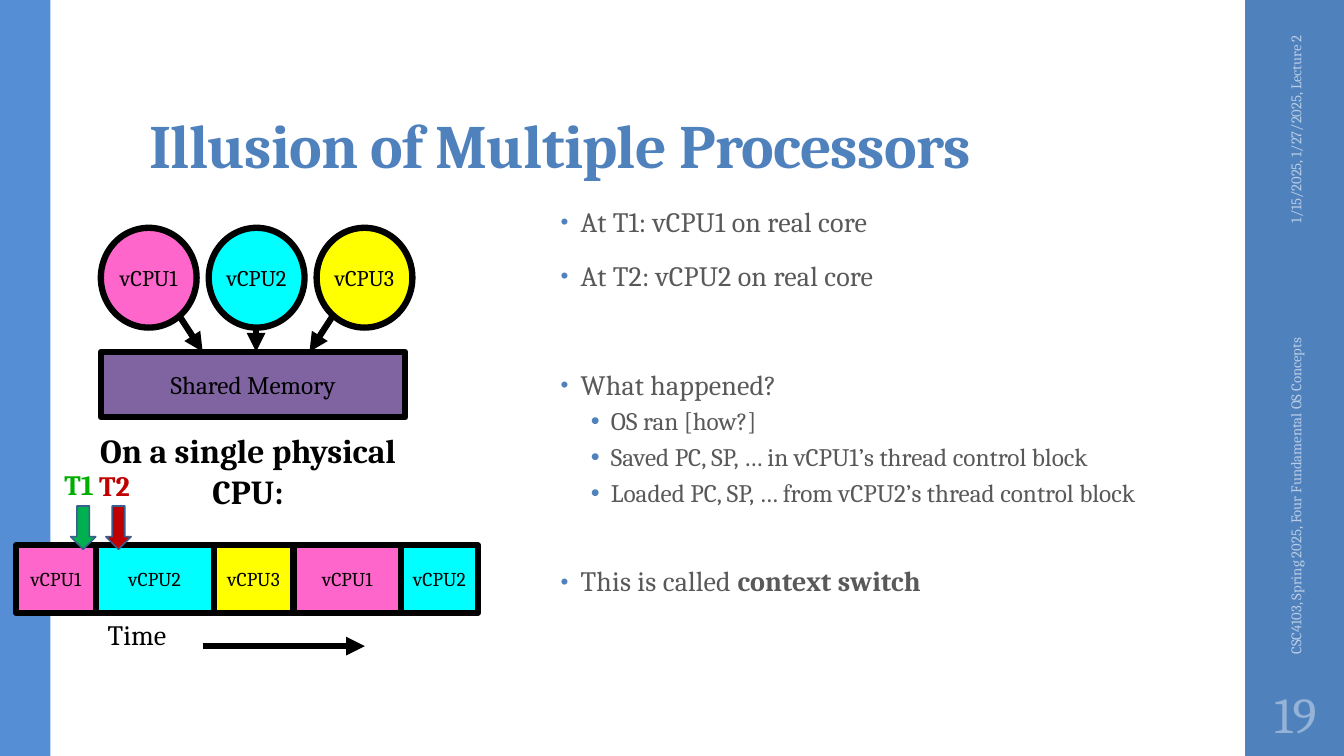
"""Build the slide on the illusion of multiple processors."""
from dataclasses import dataclass
from itertools import accumulate
from typing import Optional

from lxml import etree
from pptx import Presentation
from pptx import util as u
from pptx.dml.color import RGBColor
from pptx.enum import shapes, text
from pptx.oxml import ns

SCALE = 9144
FACE = "Cambria"
HUE = {
    "blue": "4F81BD", "sky": "558ED5", "pale": "B9CDE5", "mist": "95B3D7",
    "gray": "595959", "black": "000000", "edge": "3A5F8C", "pink": "FF66CC",
    "cyan": "00FFFF", "yellow": "FFFF00", "purple": "8064A2",
    "green": "00B050", "lime": "00AE00", "red": "C00000",
}
KIND = shapes.MSO_SHAPE
SIDE = text.PP_ALIGN
ROOT = text.MSO_ANCHOR
CPUS = {"vCPU1": "pink", "vCPU2": "cyan", "vCPU3": "yellow"}


@dataclass
class Box:
    kind: int
    at: tuple[int, int, int, int]
    fill: str
    edge: Optional[str] = "black"
    thick: float = 4.5
    words: str = ""
    size: int = 14


@dataclass
class Label:
    at: tuple[int, int, int, int]
    words: str
    size: float
    hue: str
    side: int = SIDE.CENTER
    bold: bool = False
    wrap: bool = False
    turn: int = 0
    root: int = ROOT.TOP
    pad: int = 10


@dataclass
class Arrow:
    start: tuple[int, int]
    end: tuple[int, int]


@dataclass
class Point:
    words: str
    strong: str = ""
    level: int = 0
    before: int = 14


def px(*vals: int) -> list[int]:
    return [u.Emu(val * SCALE) for val in vals]


def rgb(name: str) -> RGBColor:
    return RGBColor.from_string(HUE[name])


def style(para, size: float, hue: str, bold: bool = False, space: int = 0) -> None:
    font = para.font
    font.name, font.size, font.bold = FACE, u.Pt(size), bold
    font.color.rgb = rgb(hue)
    if space:
        font._rPr.set("spc", str(space))


def place(shape, at: tuple[int, int, int, int]) -> None:
    shape.left, shape.top, shape.width, shape.height = px(*at)


def add_box(slide, box: Box) -> None:
    shape = slide.shapes.add_shape(box.kind, *px(*box.at))
    shape.shadow.inherit = False
    shape.fill.solid()
    shape.fill.fore_color.rgb = rgb(box.fill)
    if box.edge:
        shape.line.color.rgb = rgb(box.edge)
        shape.line.width = u.Pt(box.thick)
    else:
        shape.line.fill.background()
    if box.words:
        frame = shape.text_frame
        frame.word_wrap, frame.vertical_anchor = False, ROOT.MIDDLE
        para = frame.paragraphs[0]
        para.text, para.alignment = box.words, SIDE.CENTER
        style(para, box.size, "black")


def add_label(slide, label: Label) -> None:
    shape = slide.shapes.add_textbox(*px(*label.at))
    shape.rotation = label.turn
    frame = shape.text_frame
    frame.word_wrap, frame.vertical_anchor = label.wrap, label.root
    frame.margin_left, frame.margin_right = px(label.pad, label.pad)
    para = frame.paragraphs[0]
    para.text, para.alignment = label.words, label.side
    style(para, label.size, label.hue, label.bold)


def add_arrow(slide, arrow: Arrow) -> None:
    line = slide.shapes.add_connector(
        shapes.MSO_CONNECTOR.STRAIGHT, *px(*arrow.start, *arrow.end))
    line.line.color.rgb = rgb("black")
    line.line.width = u.Pt(4.5)
    etree.SubElement(line.line._get_or_add_ln(), ns.qn("a:tailEnd"), type="triangle")
    etree.SubElement(line._element.spPr, ns.qn("a:effectLst"))


def add_title(slide) -> None:
    title = slide.shapes.title
    place(title, (138, 32, 1060, 153))
    frame = title.text_frame
    frame.auto_size, frame.vertical_anchor = text.MSO_AUTO_SIZE.NONE, ROOT.BOTTOM
    frame.margin_top, frame.margin_bottom = px(3, 5)
    para = frame.paragraphs[0]
    para.text, para.alignment = "Illusion of Multiple Processors", SIDE.LEFT
    para.line_spacing = 0.9
    style(para, 44, "blue", True, -50)


def add_mark(para, level: int) -> None:
    props = para._p.get_or_add_pPr()
    left, hang = px(50 if level else 20, -20)
    props.set("marL", str(left))
    props.set("indent", str(hang))
    tint = etree.SubElement(props, ns.qn("a:buClr"))
    etree.SubElement(tint, ns.qn("a:srgbClr"), val=HUE["blue"])
    size = "100000" if level else "80000"
    etree.SubElement(props, ns.qn("a:buSzPct"), val=size)
    etree.SubElement(props, ns.qn("a:buChar"), char="•")


def add_list(slide, points: list[Point]) -> None:
    body = slide.placeholders[1]
    place(body, (546, 200, 627, 476))
    frame = body.text_frame
    frame.auto_size = text.MSO_AUTO_SIZE.NONE
    for i, point in enumerate(points):
        para = frame.add_paragraph() if i else frame.paragraphs[0]
        sub = point.level > 0
        para.level = point.level
        add_mark(para, point.level)
        para.line_spacing = 0.9 if sub else 0.95
        para.space_before = u.Pt(point.before)
        para.space_after = u.Pt(3 if sub else 2)
        para.add_run().text = point.words
        if point.strong:
            run = para.add_run()
            run.text, run.font.bold = point.strong, True
        style(para, 18 if sub else 20, "gray", space=0 if sub else 10)


def main() -> None:
    deck = Presentation()
    deck.slide_width, deck.slide_height = px(1333, 750)
    slide = deck.slides.add_slide(deck.slide_layouts[1])
    rect, oval, down = KIND.RECTANGLE, KIND.OVAL, KIND.DOWN_ARROW

    add_title(slide)
    add_list(slide, [
        Point("At T1: vCPU1 on real core", before=0),
        Point("At T2: vCPU2 on real core"),
        Point("What happened?", before=53),
        Point("OS ran [how?]", level=1, before=3),
        Point("Saved PC, SP, … in vCPU1’s thread control block", level=1, before=3),
        Point("Loaded PC, SP, … from vCPU2’s thread control block", level=1, before=3),
        Point("This is called ", "context switch", before=39),
    ])

    wides = [79, 117, 79, 107, 76]
    lefts = accumulate(wides, initial=16)
    slots = [Box(rect, (x, 541, wide, 67), CPUS[name], words=name)
             for x, wide, name in zip(lefts, wides, [*CPUS, "vCPU1", "vCPU2"])]
    cores = [Box(oval, (100 + 107 * i, 226, 95, 99), hue, words=name, size=16)
             for i, (name, hue) in enumerate(CPUS.items())]
    for box in [
        Box(rect, (1235, 0, 100, 750), "blue", None),
        Box(rect, (0, 0, 50, 750), "sky", None),
        *slots,
        Box(down, (70, 502, 25, 43), "green", "edge", 1.1),
        Box(down, (105, 502, 25, 43), "red", "edge", 1.1),
        *cores,
        Box(rect, (100, 349, 302, 65), "purple", words="Shared Memory", size=18),
    ]:
        add_box(slide, box)

    for label in [
        Label((1181, 109, 208, 40), "1/15/2025, 1/27/2025, Lecture 2", 10.5, "pale",
              SIDE.RIGHT, wrap=True, turn=270, root=ROOT.MIDDLE),
        Label((1089, 443, 392, 40), "CSC4103, Spring 2025, Four Fundamental OS Concepts",
              10.5, "pale", SIDE.LEFT, wrap=True, turn=270, root=ROOT.MIDDLE),
        Label((1235, 675, 100, 65), "19", 36, "mist", wrap=True, root=ROOT.MIDDLE, pad=5),
        Label((97, 608, 94, 44), "Time", 20, "black", SIDE.LEFT),
        Label((62, 422, 368, 50), "On a single physical CPU:", 24, "black",
              bold=True, wrap=True),
        Label((51, 459, 55, 44), "T1", 20, "lime", bold=True),
        Label((86, 460, 55, 44), "T2", 20, "red", bold=True),
    ]:
        add_label(slide, label)

    for arrow in [
        Arrow((201, 641), (362, 641)),
        Arrow((177, 312), (201, 349)),
        Arrow((331, 312), (307, 349)),
        Arrow((254, 325), (254, 349)),
    ]:
        add_arrow(slide, arrow)
    deck.save("out.pptx")


if __name__ == "__main__":
    main()
